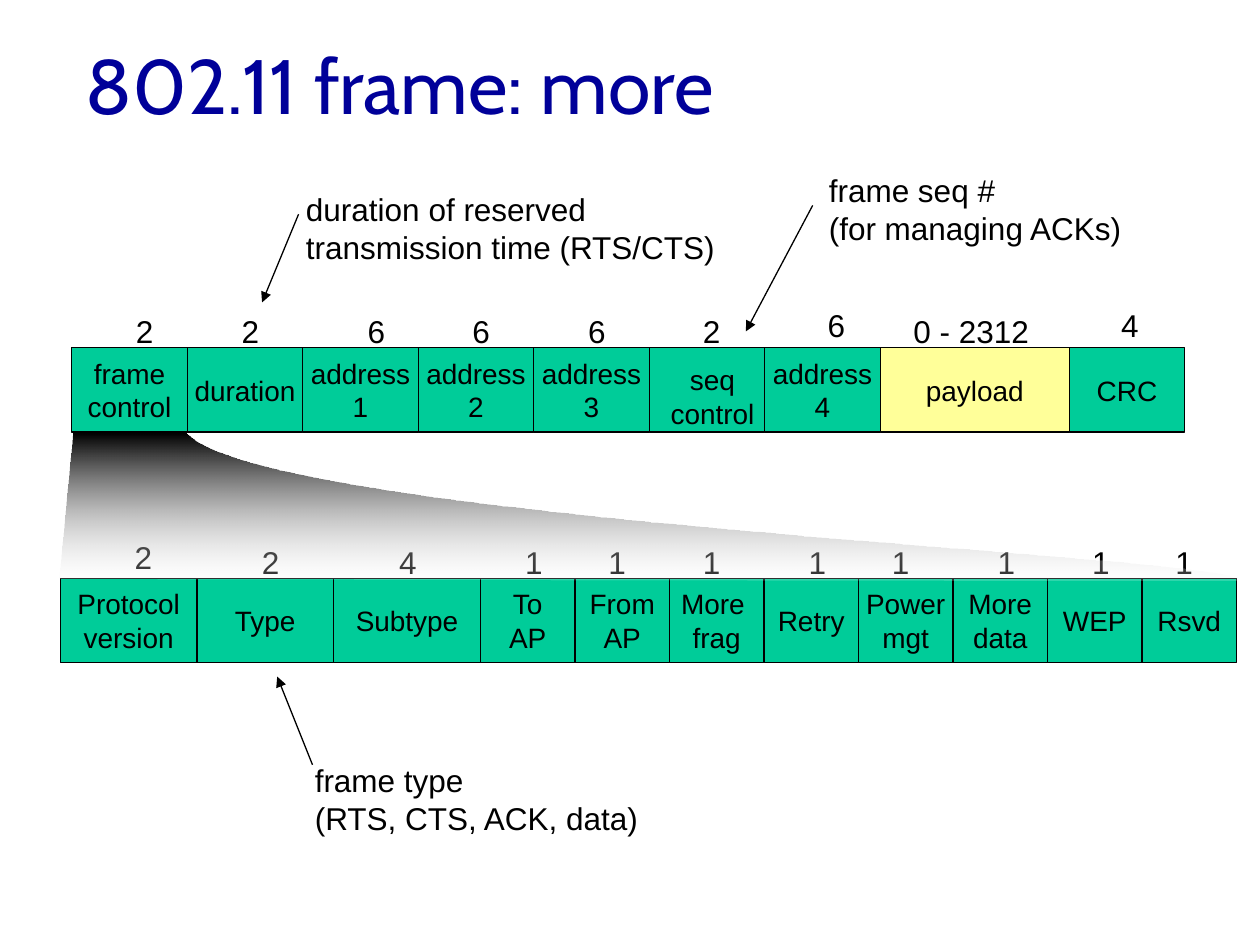
from dataclasses import dataclass
from typing import NamedTuple

from lxml import etree
from pptx import Presentation
from pptx.dml.color import RGBColor
from pptx.enum.shapes import MSO_CONNECTOR, MSO_SHAPE
from pptx.enum.text import MSO_ANCHOR, MSO_AUTO_SIZE, PP_ALIGN
from pptx.oxml.ns import qn
from pptx.slide import Slide
from pptx.text.text import TextFrame
from pptx.util import Inches, Pt

RECTANGLE = MSO_SHAPE.RECTANGLE
STRAIGHT = MSO_CONNECTOR.STRAIGHT
TOP, MIDDLE = MSO_ANCHOR.TOP, MSO_ANCHOR.MIDDLE
LEFT, CENTER = PP_ALIGN.LEFT, PP_ALIGN.CENTER
FIT_SHAPE = MSO_AUTO_SIZE.SHAPE_TO_FIT_TEXT


@dataclass(frozen=True)
class Theme:
    ink: RGBColor = RGBColor(0x00, 0x00, 0x00)
    paper: RGBColor = RGBColor(0xFF, 0xFF, 0xFF)
    title: RGBColor = RGBColor(0x00, 0x00, 0x99)
    header: RGBColor = RGBColor(0x00, 0xCC, 0x99)
    payload: RGBColor = RGBColor(0xFF, 0xFF, 0x99)
    body_font: str = "Arial"
    title_font: str = "Cabin"
    title_size: int = 44
    note_size: int = 18
    field_size: int = 16
    line_width: float = 0.75


THEME = Theme()


class Box(NamedTuple):
    left: float
    top: float
    width: float
    height: float


class Field(NamedTuple):
    label: str
    twelfths: int  # width in twelfths of an inch
    size: str
    size_left: float
    size_lift: float = 0
    fill: RGBColor = THEME.header


class Row(NamedTuple):
    left: float
    top: float
    size_top: float
    fields: list[Field]


class Note(NamedTuple):
    text: str
    box: Box
    arrow_start: tuple[float, float]
    arrow_end: tuple[float, float]


FIELD_HEIGHT = 0.67
SIZE_HEIGHT = 0.4
FRAME = Row(0.57, 2.76, 2.43, [
    Field("frame\ncontrol", 11, "2", 0.98),
    Field("duration", 11, "2", 1.82),
    Field("address\n1", 11, "6", 2.82),
    Field("address\n2", 11, "6", 3.65),
    Field("address\n3", 11, "6", 4.57),
    Field("", 11, "2", 5.48),
    Field("address\n4", 11, "6", 6.47, 0.05),
    Field("payload", 18, "0 - 2312", 7.15, fill=THEME.payload),
    Field("CRC", 11, "4", 8.8, 0.05),
])
FRAME_CONTROL = Row(0.48, 4.59, 4.26, [
    Field("Protocol\nversion", 13, "2", 0.97, 0.04),
    Field("Type", 13, "2", 1.98),
    Field("Subtype", 14, "4", 3.07),
    Field("To\nAP", 9, "1", 4.07),
    Field("From\nAP", 9, "1", 4.73),
    Field("More \nfrag", 9, "1", 5.48),
    Field("Retry", 9, "1", 6.32),
    Field("Power\nmgt", 9, "1", 6.98),
    Field("More\ndata", 9, "1", 7.82),
    Field("WEP", 9, "1", 8.57),
    Field("Rsvd", 9, "1", 9.23),
])
NOTES = [
    Note("duration of reserved\ntransmission time (RTS/CTS)",
         Box(2.33, 1.46, 3.48, 0.71), (2.37, 1.7), (2.08, 2.4)),
    Note("frame seq #\n(for managing ACKs)",
         Box(6.48, 1.31, 2.54, 0.71), (6.45, 1.63), (5.92, 2.63)),
    Note("frame type\n(RTS, CTS, ACK, data)",
         Box(2.4, 5.99, 2.82, 0.7), (2.48, 6.07), (2.2, 5.37)),
]


def write_text(frame: TextFrame, text: str, size: int, align: PP_ALIGN,
               font: str = THEME.body_font, color: RGBColor = THEME.ink) -> None:
    frame.text = text
    for paragraph in frame.paragraphs:
        paragraph.alignment = align
        paragraph.font.name = font
        paragraph.font.size = Pt(size)
        paragraph.font.color.rgb = color


def add_label(slide: Slide, text: str, box: Box, size: int = THEME.note_size,
              align: PP_ALIGN = LEFT) -> None:
    frame = slide.shapes.add_textbox(*map(Inches, box)).text_frame
    frame.word_wrap = False
    frame.auto_size = FIT_SHAPE
    write_text(frame, text, size, align)


def add_field(slide: Slide, field: Field, box: Box) -> None:
    shape = slide.shapes.add_shape(RECTANGLE, *map(Inches, box))
    shape.shadow.inherit = False
    shape.fill.solid()
    shape.fill.fore_color.rgb = field.fill
    shape.line.color.rgb = THEME.ink
    shape.line.width = Pt(THEME.line_width)
    if field.label:
        shape.text_frame.word_wrap = False
        shape.text_frame.vertical_anchor = MIDDLE
        write_text(shape.text_frame, field.label, THEME.field_size, CENTER)


def add_row(slide: Slide, row: Row) -> None:
    left = row.left
    for field in row.fields:
        width = field.twelfths / 12
        add_field(slide, field, Box(left, row.top, width, FIELD_HEIGHT))
        left += width
    for field in row.fields:
        width = 0.34 if len(field.size) == 1 else 1.12
        add_label(slide, field.size, Box(field.size_left, row.size_top - field.size_lift,
                                         width, SIZE_HEIGHT))


def curve_points(start: tuple[float, float], first: tuple[float, float],
                 second: tuple[float, float], end: tuple[float, float],
                 steps: int = 60) -> list[tuple[int, int]]:
    """Points along a cubic curve, without its start."""
    points = []
    for step in range(1, steps + 1):
        t = step / steps
        weights = ((1 - t) ** 3, 3 * t * (1 - t) ** 2, 3 * t * t * (1 - t), t ** 3)
        x, y = (sum(weight * value for weight, value in zip(weights, axis))
                for axis in zip(start, first, second, end))
        points.append((Inches(x), Inches(y)))
    return points


def add_zoom_shade(slide: Slide) -> None:
    corner = (9.83, 4.61)
    builder = slide.shapes.build_freeform(Inches(0.58), Inches(3.44), scale=1.0)
    outline = [(Inches(0.47), Inches(4.59)), tuple(map(Inches, corner))]
    outline += curve_points(corner, (10, 4.41), (2.16, 4.15), (1.48, 3.44))
    builder.add_line_segments(outline, close=True)
    shape = builder.convert_to_shape()
    shape.shadow.inherit = False
    shape.line.fill.background()
    shape.fill.gradient()
    shape.fill.gradient_angle = 270  # counter-clockwise: dark at the top
    dark, light = shape.fill.gradient_stops
    dark.color.rgb = THEME.ink
    light.color.rgb = THEME.paper
    light_color = list(shape.element.spPr.iter(qn("a:srgbClr")))[-1]
    etree.SubElement(light_color, qn("a:alpha"), val="18000")


def add_arrow(slide: Slide, start: tuple[float, float], end: tuple[float, float]) -> None:
    connector = slide.shapes.add_connector(STRAIGHT, *map(Inches, start + end))
    connector.line.color.rgb = THEME.ink
    connector.line.width = Pt(THEME.line_width)
    etree.SubElement(connector.line._get_or_add_ln(), qn("a:tailEnd"), type="triangle")
    etree.SubElement(connector._element.spPr, qn("a:effectLst"))


def add_title(slide: Slide, text: str, box: Box) -> None:
    frame = slide.shapes.add_textbox(*map(Inches, box)).text_frame
    frame.word_wrap = True
    frame.vertical_anchor = TOP
    write_text(frame, text, THEME.title_size, LEFT, THEME.title_font, THEME.title)


def main() -> None:
    presentation = Presentation()
    presentation.slide_width, presentation.slide_height = Inches(10), Inches(7.5)
    slide = presentation.slides.add_slide(presentation.slide_layouts[6])

    # Frame, with the sequence label set lower than the others
    add_row(slide, FRAME)
    add_label(slide, "seq\ncontrol", Box(5.22, 2.83, 0.87, 0.64), THEME.field_size, CENTER)

    # Frame control bits under the shade that expands them
    add_row(slide, FRAME_CONTROL)
    add_zoom_shade(slide)

    # Notes and title
    for note in NOTES:
        add_label(slide, note.text, note.box)
        add_arrow(slide, note.arrow_start, note.arrow_end)
    add_title(slide, "802.11 frame: more", Box(0.58, 0.25, 8.5, 1.25))

    presentation.save("out.pptx")


if __name__ == "__main__":
    main()
